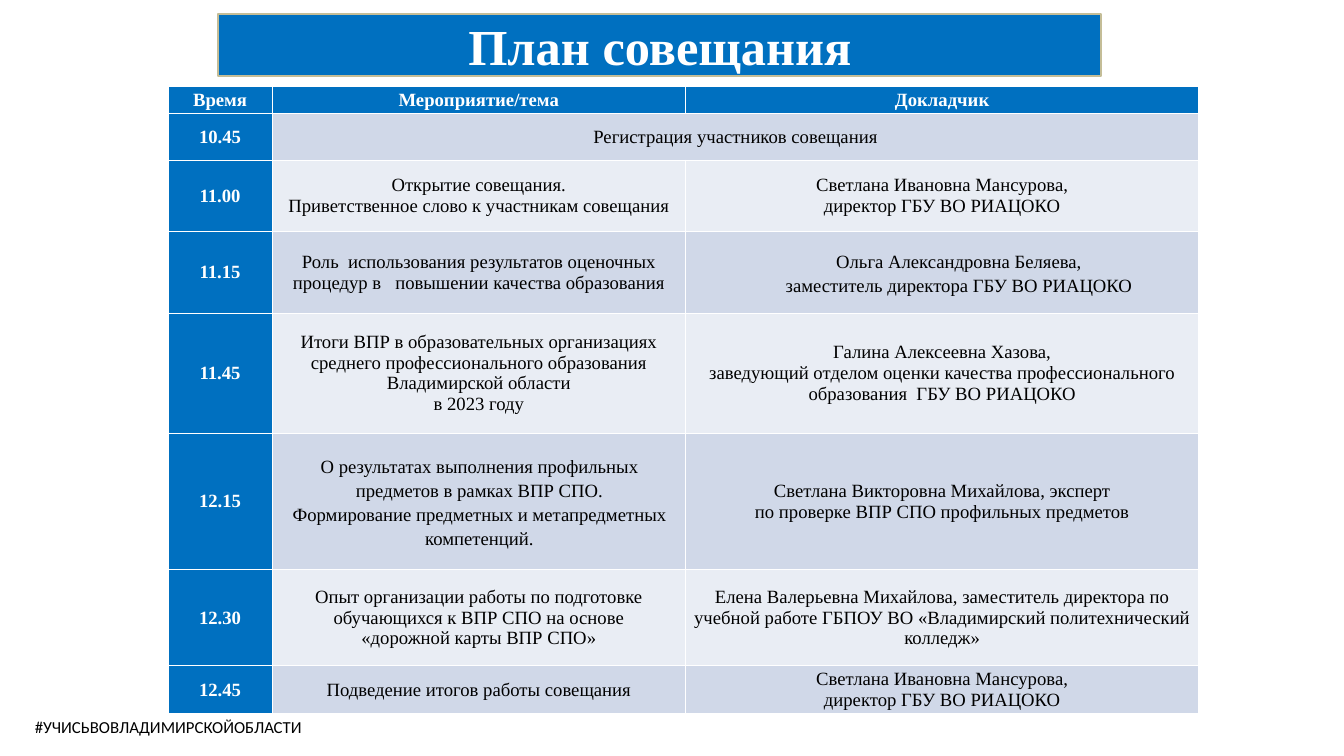
"""Build the meeting agenda slide."""
from pptx import Presentation
from pptx.dml.color import RGBColor
from pptx.enum.text import MSO_ANCHOR as ANCHOR, MSO_AUTO_SIZE as AUTO_SIZE, PP_ALIGN as ALIGN
from pptx.oxml import parse_xml
from pptx.oxml.ns import nsdecls
from pptx.util import Inches, Pt

BLUE = RGBColor(0x00, 0x70, 0xC0)
BAND_DARK = RGBColor(0xD0, 0xD8, 0xE8)
BAND_LIGHT = RGBColor(0xE9, 0xED, 0xF4)
TAN = RGBColor(0xC4, 0xBD, 0x97)
WHITE = RGBColor(0xFF, 0xFF, 0xFF)
BLACK = RGBColor(0x00, 0x00, 0x00)
SERIF = "Times New Roman"
DIRECTOR = "Светлана Ивановна Мансурова,\nдиректор ГБУ ВО РИАЦОКО"

COLUMN_WIDTHS = (1.55, 6.15, 7.64)
ROW_HEIGHTS = (0.4, 0.69, 1.07, 1.21, 1.79, 2.03, 1.43, 0.71)
AGENDA = (
    ("Время", "Мероприятие/тема", "Докладчик"),
    ("10.45", "Регистрация участников совещания"),
    ("11.00", "Открытие совещания.\nПриветственное слово к участникам совещания", DIRECTOR),
    ("11.15",
     "Роль  использования результатов оценочных процедур в   повышении качества образования",
     "Ольга Александровна Беляева,\nзаместитель директора ГБУ ВО РИАЦОКО"),
    ("11.45",
     "Итоги ВПР в образовательных организациях среднего профессионального образования "
     "Владимирской области\nв 2023 году",
     "Галина Алексеевна Хазова,\nзаведующий отделом оценки качества профессионального "
     "образования  ГБУ ВО РИАЦОКО"),
    ("12.15",
     "О результатах выполнения профильных предметов в рамках ВПР СПО.\n"
     "Формирование предметных и метапредметных компетенций.",
     "Светлана Викторовна Михайлова, эксперт\nпо проверке ВПР СПО профильных предметов"),
    ("12.30",
     "Опыт организации работы по подготовке обучающихся к ВПР СПО на основе\n"
     "«дорожной карты ВПР СПО»",
     "Елена Валерьевна Михайлова, заместитель директора по учебной работе "
     "ГБПОУ ВО «Владимирский политехнический колледж»"),
    ("12.45", "Подведение итогов работы совещания", DIRECTOR),
)
SPACED_INDENTS = {(0, 0): 0, (0, 1): 0, (0, 2): 0, (3, 2): 0.5, (5, 1): 0.02}


def format_paragraph(p, size, color, bold=False, name=SERIF, align=ALIGN.CENTER):
    """Set the alignment and font of a paragraph."""
    p.alignment = align
    p.font.name = name
    p.font.size = Pt(size)
    p.font.bold = bold
    p.font.color.rgb = color


def add_title(s, text):
    """Turn the title placeholder into a rounded banner."""
    sp = s.shapes.title
    sp.left, sp.top, sp.width, sp.height = map(Inches, (3.25, 0.21, 13.14, 0.92))
    sp._element.spPr.append(parse_xml(
        f'<a:prstGeom {nsdecls("a")} prst="roundRect"><a:avLst/></a:prstGeom>'))
    sp.fill.solid()
    sp.fill.fore_color.rgb = BLUE
    sp.line.color.rgb = TAN
    sp.line.width = Pt(2)
    tf = sp.text_frame
    tf.text = text
    tf.auto_size = AUTO_SIZE.NONE
    tf.vertical_anchor = ANCHOR.MIDDLE
    format_paragraph(tf.paragraphs[0], 54, WHITE, True)


def fill_cell(cell, text, row, col):
    """Write and format one agenda cell."""
    heading = row == 0 or col == 0
    cell.fill.solid()
    cell.fill.fore_color.rgb = BLUE if heading else BAND_DARK if row % 2 else BAND_LIGHT
    cell.margin_left = cell.margin_right = Inches(0.1)
    cell.margin_top = cell.margin_bottom = 0
    cell.vertical_anchor = ANCHOR.MIDDLE if row else ANCHOR.TOP
    cell.text = text
    for p in cell.text_frame.paragraphs:
        format_paragraph(p, 20, WHITE if heading else BLACK, heading)
        if (row, col) in SPACED_INDENTS:
            p.line_spacing = 1.15
            p._p.get_or_add_pPr().set("marL", str(Inches(SPACED_INDENTS[row, col])))


def add_agenda(s):
    """Add the agenda table."""
    table = s.shapes.add_table(
        len(AGENDA), len(COLUMN_WIDTHS), Inches(2.5), Inches(1.29),
        Inches(sum(COLUMN_WIDTHS)), Inches(sum(ROW_HEIGHTS))).table
    table.first_col = True
    for column, width in zip(table.columns, COLUMN_WIDTHS):
        column.width = Inches(width)
    for row, height in zip(table.rows, ROW_HEIGHTS):
        row.height = Inches(height)
    table.cell(1, 1).merge(table.cell(1, 2))
    for i, texts in enumerate(AGENDA):
        for j, text in enumerate(texts):
            fill_cell(table.cell(i, j), text, i, j)


def add_hashtag(s, text):
    """Add the hashtag below the table."""
    tf = s.shapes.add_textbox(Inches(0.42), Inches(10.62), Inches(4.27), Inches(0.4)).text_frame
    tf.text = text
    tf.word_wrap = False
    tf.auto_size = AUTO_SIZE.SHAPE_TO_FIT_TEXT
    format_paragraph(tf.paragraphs[0], 18, BLACK, name="Calibri", align=ALIGN.LEFT)


def main():
    """Create and save the presentation."""
    prs = Presentation()
    prs.slide_width, prs.slide_height = Inches(20), Inches(11.25)
    s = prs.slides.add_slide(prs.slide_layouts.get_by_name("Title Only"))
    add_agenda(s)
    add_title(s, "План совещания")
    add_hashtag(s, "#УЧИСЬВОВЛАДИМИРСКОЙОБЛАСТИ")
    prs.save("out.pptx")


if __name__ == "__main__":
    main()
